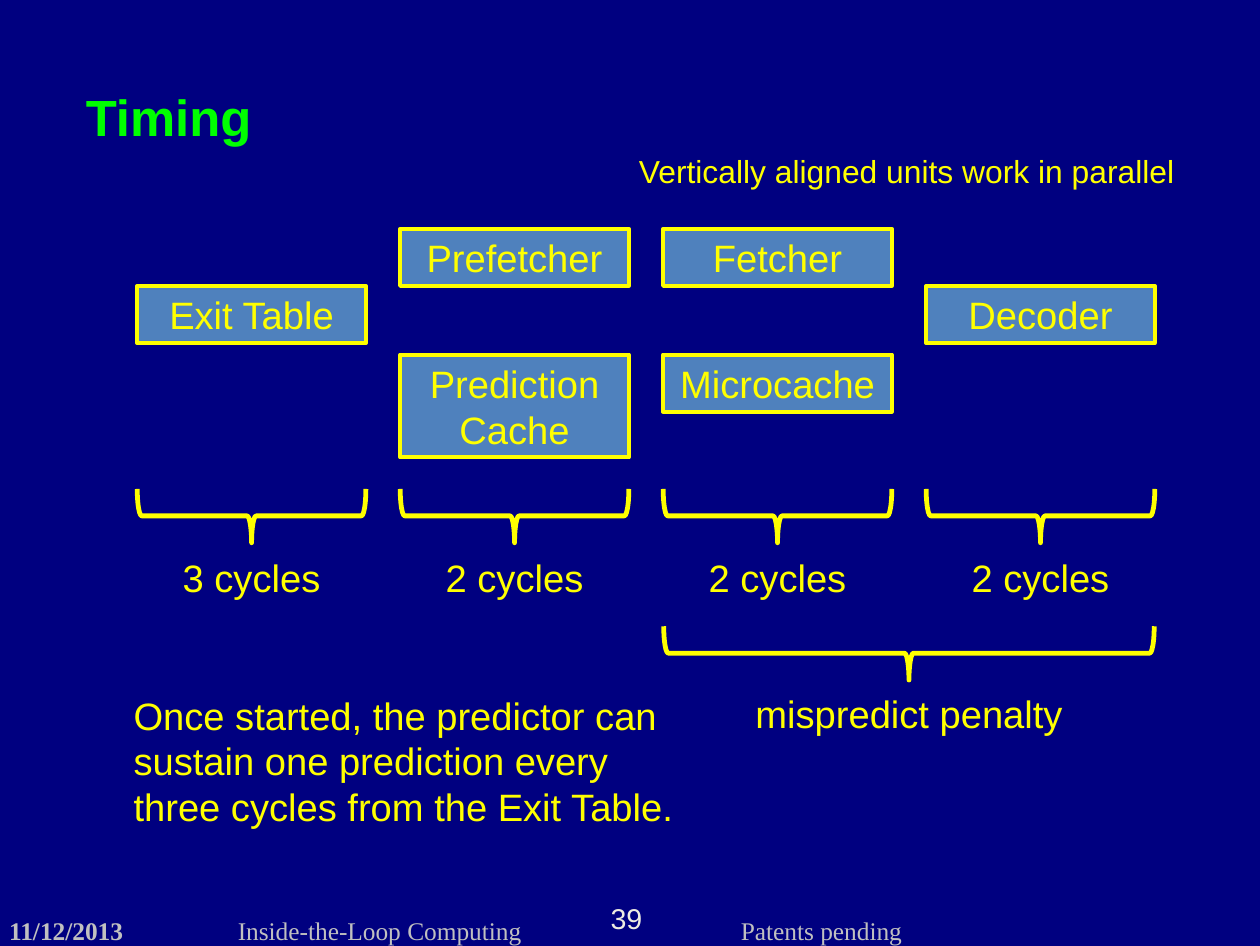
from pptx import Presentation
from pptx.dml.color import RGBColor
from pptx.enum import shapes, text
from pptx.util import Inches, Pt

NAVY = RGBColor(0x00, 0x00, 0x80)
GREEN = RGBColor(0x00, 0xFF, 0x00)
YELLOW = RGBColor(0xFF, 0xFF, 0x00)
STEEL = RGBColor(0x4F, 0x81, 0xBD)
SILVER = RGBColor(0xC0, 0xC0, 0xC0)
CREAM = RGBColor(0xEE, 0xEC, 0xE1)

UNIT_WIDTH = 2
STAGE_LEFT = 1.2
STAGE_STEP = 2.3
BRACE_DEPTH = 0.47
STAGES = [
    ("3 cycles", [("Exit Table", 2.5, 0.5)]),
    ("2 cycles", [("Prefetcher", 2, 0.5), ("Prediction Cache", 3.1, 0.9)]),
    ("2 cycles", [("Fetcher", 2, 0.5), ("Microcache", 3.1, 0.5)]),
    ("2 cycles", [("Decoder", 2.5, 0.5)]),
]
FOOTER = [
    ("11/12/2013", 0.08, 8, 1.2, 16, "Times New Roman", SILVER, True),
    ("39", 5.34, 7.88, 0.4, 18, "Arial", CREAM, False),
    ("Inside-the-Loop Computing", 2.08, 8, 3, 16, "Times New Roman", SILVER, False),
    ("Patents pending", 6.48, 8, 1.6, 16, "Times New Roman", SILVER, False),
]


def write(frame, words, size, color=YELLOW, font="Arial", bold=False,
          align=text.PP_ALIGN.LEFT):
    """Write one formatted run into a text frame."""
    paragraph = frame.paragraphs[0]
    paragraph.alignment = align
    run = paragraph.add_run()
    run.text = words
    run.font.size = Pt(size)
    run.font.name = font
    run.font.bold = bold
    run.font.color.rgb = color


def clear_margins(frame):
    """Remove the inner margins of a text frame."""
    frame.margin_left = frame.margin_right = 0
    frame.margin_top = frame.margin_bottom = 0


def add_title(slide, words):
    """Place and format the title placeholder."""
    title = slide.shapes.title
    title.left, title.top = Inches(0.75), Inches(0.75)
    title.width, title.height = Inches(1.46), Inches(0.52)
    frame = title.text_frame
    clear_margins(frame)
    frame.word_wrap = False
    frame.auto_size = text.MSO_AUTO_SIZE.NONE
    frame.vertical_anchor = text.MSO_ANCHOR.TOP
    write(frame, words, 32, GREEN, bold=True)


def add_label(slide, left, top, width, height):
    """Add an empty wrapping text box and return its frame."""
    label = slide.shapes.add_textbox(
        Inches(left), Inches(top), Inches(width), Inches(height))
    label.text_frame.word_wrap = True
    return label.text_frame


def add_outlined(slide, kind, left, top, width, height, weight):
    """Add a preset shape with a yellow outline."""
    outlined = slide.shapes.add_shape(
        kind, Inches(left), Inches(top), Inches(width), Inches(height))
    outlined.shadow.inherit = False
    outlined.line.color.rgb = YELLOW
    outlined.line.width = Pt(weight)
    return outlined


def add_unit(slide, name, left, top, height):
    """Add a hardware unit as a named box."""
    unit = add_outlined(slide, shapes.MSO_SHAPE.RECTANGLE,
                        left, top, UNIT_WIDTH, height, 2.5)
    unit.fill.solid()
    unit.fill.fore_color.rgb = STEEL
    unit.text_frame.word_wrap = True
    unit.text_frame.vertical_anchor = text.MSO_ANCHOR.MIDDLE
    write(unit.text_frame, name, 24, align=text.PP_ALIGN.CENTER)


def add_span(slide, words, center, middle, length, label_top, label_width):
    """Add a downward brace with its label centred below."""
    brace = add_outlined(slide, shapes.MSO_SHAPE.RIGHT_BRACE,
                         center - BRACE_DEPTH / 2, middle - length / 2,
                         BRACE_DEPTH, length, 3)
    brace.rotation = 90
    brace.fill.background()
    label = add_label(slide, center - label_width / 2, label_top, label_width, 0.5)
    write(label, words, 24, align=text.PP_ALIGN.CENTER)


def add_footer(slide):
    """Add the date, page number and footer texts."""
    for words, left, top, width, size, font, color, bold in FOOTER:
        frame = add_label(slide, left, top, width, 0.25)
        clear_margins(frame)
        write(frame, words, size, color, font, bold)


def main():
    """Build the timing slide."""
    deck = Presentation()
    deck.slide_width, deck.slide_height = Inches(11.02), Inches(8.27)
    slide = deck.slides.add_slide(deck.slide_layouts[5])
    slide.background.fill.solid()
    slide.background.fill.fore_color.rgb = NAVY

    add_footer(slide)
    add_title(slide, "Timing")
    for index, (cycles, units) in enumerate(STAGES):
        left = STAGE_LEFT + index * STAGE_STEP
        for name, top, height in units:
            add_unit(slide, name, left, top, height)
        add_span(slide, cycles, left + UNIT_WIDTH / 2, 4.51, UNIT_WIDTH, 4.8, 1.6)
    add_span(slide, "mispredict penalty", 7.95, 5.71, 4.29, 5.99, 3.1)

    write(add_label(slide, 5.49, 1.28, 5.1, 0.44),
          "Vertically aligned units work in parallel", 20)
    write(add_label(slide, 1.07, 6, 5.03, 1.31),
          "Once started, the predictor can sustain one prediction every "
          "three cycles from the Exit Table.", 24)
    deck.save("out.pptx")


if __name__ == "__main__":
    main()
